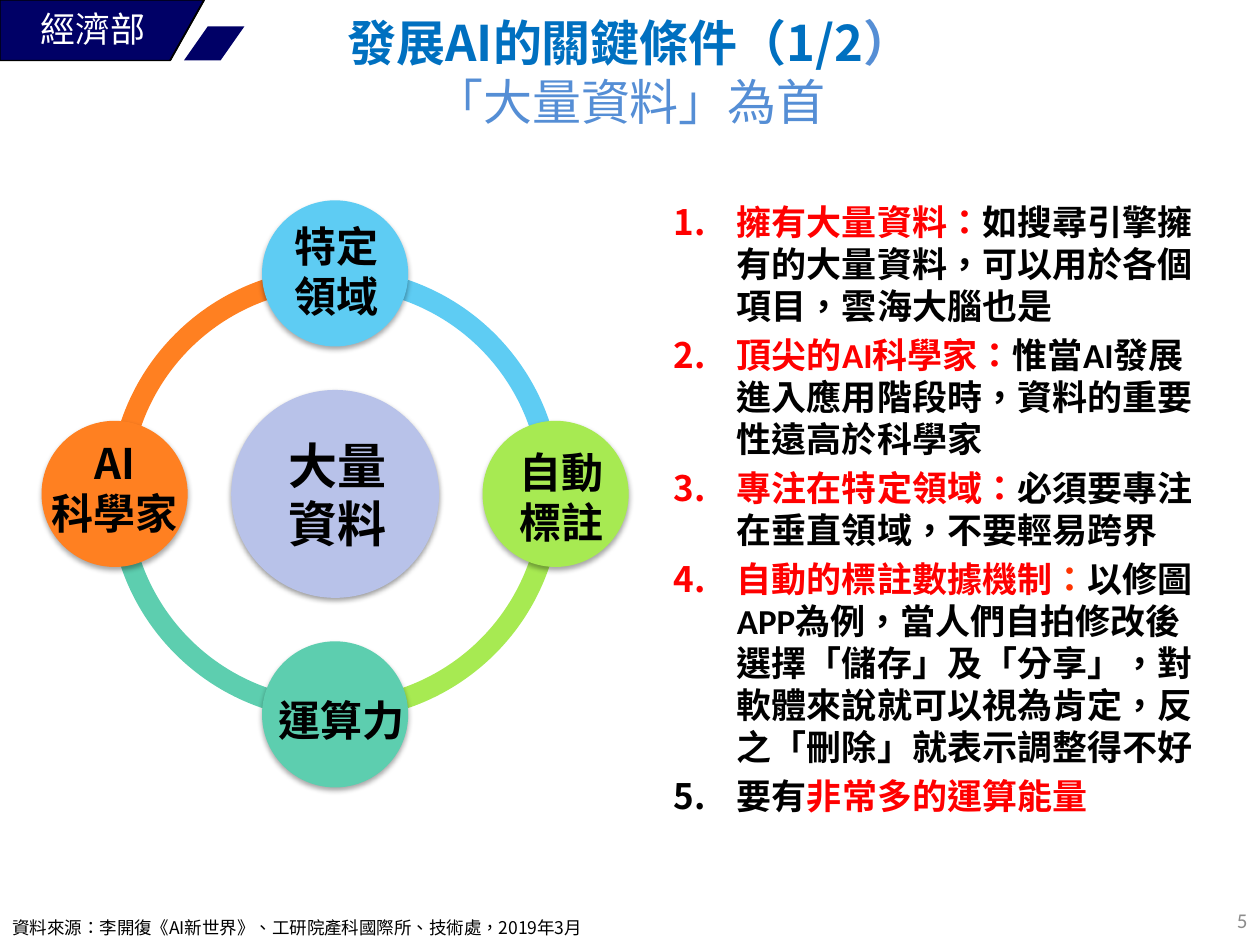
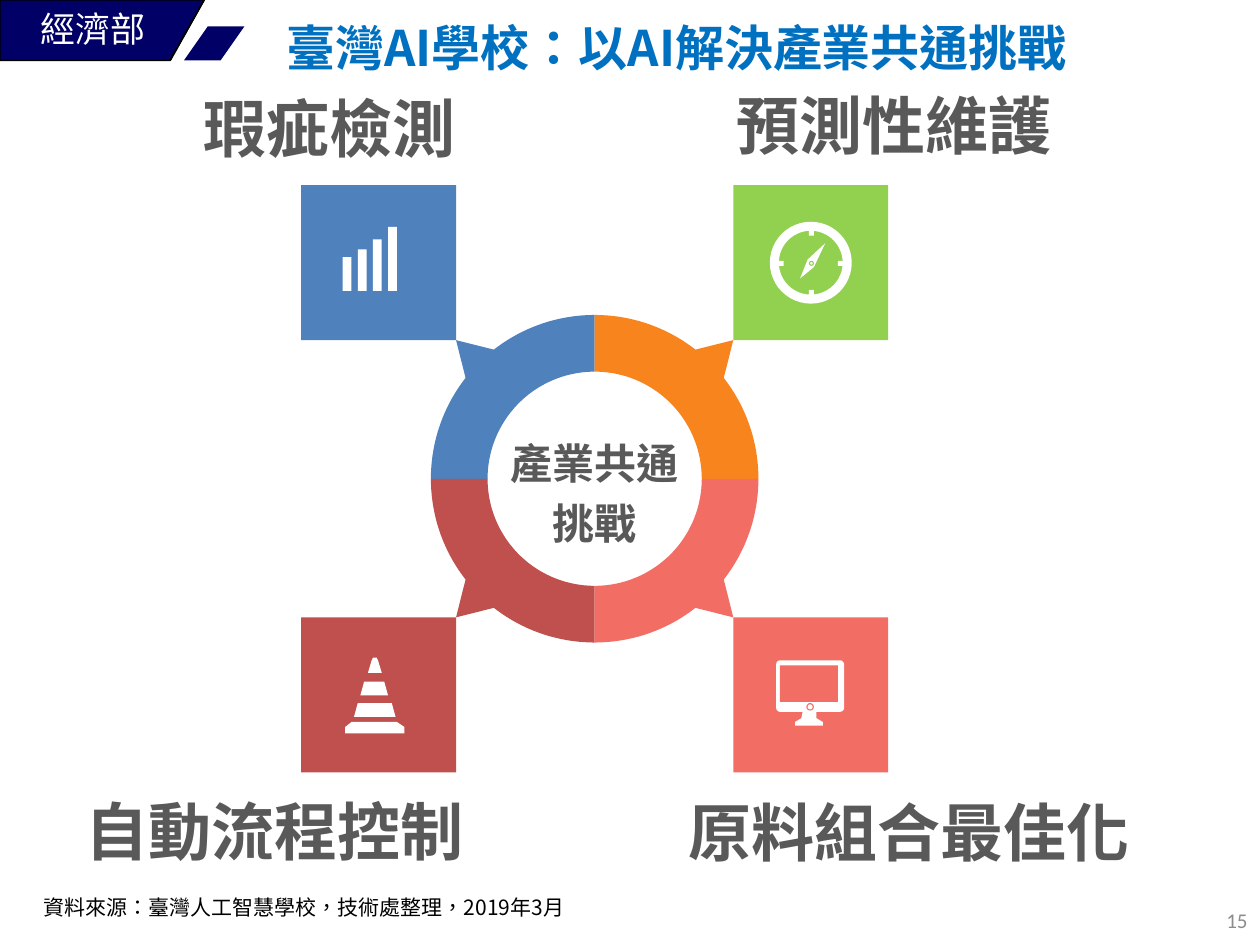
import math

import pptx
import pptx.dml.color
import pptx.enum.shapes
import pptx.enum.text
import pptx.oxml
import pptx.oxml.ns
import pptx.util

PX = 9144  # 100 px to the inch
SHAPE = pptx.enum.shapes.MSO_SHAPE
ALIGN = pptx.enum.text.PP_ALIGN
ANCHOR = pptx.enum.text.MSO_ANCHOR

BLACK, WHITE, RED = "000000", "FFFFFF", "FF0000"
NAVY, TITLE, SOFT, GRAY, PALE = "000066", "0070C0", "558ED5", "595959", "8C8C8C"
SKY, LIME, MINT, ORANGE, LILAC = "5ECCF3", "A7EA52", "5DCEAF", "FF8021", "B8C2E9"
BLUE, GREEN, BRICK, CORAL, AMBER = "4F81BD", "92D050", "C0504D", "F26D64", "F8841D"
NOTO, HEAD, BODY = "Noto Sans CJK SC", "Noto Sans CJK JP", "Calibri"


def emu(*sizes):
    return [round(size * PX) for size in sizes]


def color(code):
    return pptx.dml.color.RGBColor.from_string(code)


def xml(tag, inner="", **attrs):
    """Make one DrawingML element."""
    names = " ".join(f'{key}="{val}"' for key, val in attrs.items())
    space = pptx.oxml.ns.nsdecls("a")
    return pptx.oxml.parse_xml(f"<a:{tag} {space} {names}>{inner}</a:{tag}>")


def paint(shape, fill, line=None):
    shape.shadow.inherit = False
    shape.fill.solid()
    shape.fill.fore_color.rgb = color(fill)
    if line:
        shape.line.color.rgb = color(line)
        shape.line.width = pptx.util.Pt(0.75)
    else:
        shape.line.fill.background()
    return shape


def draw(slide, kind, box, fill, adjust=()):
    shape = slide.shapes.add_shape(kind, *emu(*box))
    for index, value in enumerate(adjust):
        shape.adjustments[index] = value
    return paint(shape, fill)


def outline(slide, x, y, points, fill, line=None):
    """Draw a closed polygon whose points are relative to x, y."""
    places = [emu(x + dx, y + dy) for dx, dy in points]
    form = slide.shapes.build_freeform(*places[0])
    form.add_line_segments(places[1:], close=True)
    return paint(form.convert_to_shape(), fill, line)


def glow(shape, blur, dist, alpha):
    """Give the shape a soft shadow straight below it."""
    effects = shape._element.spPr.find(pptx.oxml.ns.qn("a:effectLst"))
    shade = f'<a:srgbClr val="{BLACK}"><a:alpha val="{alpha * 1000}"/></a:srgbClr>'
    effects.append(xml("outerShdw", shade, blurRad=round(blur * 12700),
                       dist=round(dist * 12700), dir=5400000, rotWithShape=0))


def write(slide, box, paras, size, face=NOTO, bold=False, align=ALIGN.LEFT,
          anchor=ANCHOR.TOP, wrap=True, lead=None):
    """Add a text box; each paragraph is a list of (text, colour[, bold])."""
    frame = slide.shapes.add_textbox(*emu(*box)).text_frame
    frame.word_wrap = wrap
    frame.vertical_anchor = anchor
    for index, runs in enumerate(paras):
        para = frame.add_paragraph() if index else frame.paragraphs[0]
        para.alignment = align
        if lead:
            para.line_spacing = lead
        for text, ink, *weight in runs:
            if text == "\n":
                para.add_line_break()
                continue
            run = para.add_run()
            run.text = text
            run.font.size = pptx.util.Pt(size)
            run.font.name = face
            run.font.bold = weight[0] if weight else bold
            run.font.color.rgb = color(ink)
            props = run._r.get_or_add_rPr()
            props.set("lang", "zh-TW")
            props.append(xml("ea", typeface=face if "CJK" in face else NOTO))
    return frame


def badge(slide):
    outline(slide, 0, 0, [(0, 0), (0, 48), (135, 48), (162, 0)], NAVY, BLACK)
    draw(slide, SHAPE.PARALLELOGRAM, (146, 21, 48, 27), NAVY, [0.7])
    write(slide, (4, 1, 140, 34), [[("經濟部", WHITE)]], 20,
          "Times New Roman", align=ALIGN.CENTER)
    edge = slide.shapes.add_connector(
        pptx.enum.shapes.MSO_CONNECTOR.STRAIGHT, *emu(162, 0, 135, 48))
    edge.line.color.rgb = color(BLACK)
    edge.line.width = pptx.util.Pt(1)
    edge._element.spPr.append(xml("effectLst"))


def page(deck, title, box, number):
    """Start a slide with its badge, title and page number."""
    slide = deck.slides.add_slide(deck.slide_layouts[6])
    badge(slide)
    write(slide, box, [title], 28, HEAD, True, ALIGN.CENTER, ANCHOR.MIDDLE)
    write(slide, (767, 710, 233, 40), [[(number, PALE)]], 12, BODY,
          align=ALIGN.RIGHT, anchor=ANCHOR.MIDDLE)
    return slide


def ring(slide, x, y, size):
    """Draw four nodes on a circle of arcs around a hub."""
    mid, band, hub, node = size // 2, 359, 165, 116
    orbit = mid - node // 2

    def disc(cx, cy, span, fill, alpha, dist):
        box = (cx - span / 2, cy - span / 2, span, span)
        glow(draw(slide, SHAPE.OVAL, box, fill), 3.1, dist, alpha)

    def label(cx, cy, lines, points):
        box = (cx - 66, cy - 50, 132, 100)
        write(slide, box, [[(line, BLACK)] for line in lines], points,
              bold=True, align=ALIGN.CENTER, anchor=ANCHOR.MIDDLE, wrap=False)

    nodes = [  # angle, fill, label, label shift
        (0, LIME, ["自動", "標註"], 5, 2),
        (90, MINT, ["運算力"], 5, 4),
        (180, ORANGE, ["AI", "科學家"], 0, -5),
        (270, SKY, ["特定", "領域"], 1, -2),
    ]
    corner = mid - band / 2
    for angle, fill, *_ in nodes:
        draw(slide, SHAPE.BLOCK_ARC, (x + corner, y + corner, band, band), fill,
             [angle * 0.6, (angle + 90) % 360 * 0.6, 0.046])
    disc(x + mid, y + mid, hub, LILAC, 38, 1.6)
    label(x + mid + 2, y + mid, ["大量資料"], 28)
    for angle, fill, lines, dx, dy in nodes:
        turn = math.radians(angle)
        cx = x + mid + orbit * math.cos(turn)
        cy = y + mid + orbit * math.sin(turn)
        disc(cx, cy, node, fill, 35, 1.8)
        label(cx + dx, cy + dy, lines, 24)


def points(slide, box):
    """Write the numbered list of conditions."""
    items = [
        [("擁有大量資料：", RED),
         ("如搜尋引擎擁有的大量資料，可以用於各個項目，雲海大腦也是", BLACK)],
        [("頂尖的AI科學家：", RED),
         ("惟當AI發展進入應用階段時，資料的重要性遠高於科學家", BLACK)],
        [("專注在特定領域：", RED),
         ("必須要專注在垂直領域，不要輕易跨界", BLACK)],
        [("自動的標註數據機制", RED), ("：", "FF3300"),
         ("以修圖APP為例，當人們自拍修改後選擇「儲存」及「分享」，"
          "對軟體來說就可以視為肯定，反之「刪除」就表示調整得不好", BLACK)],
        [("要有", BLACK), ("非常多的運算能量", RED)],
    ]
    for para in write(slide, box, items, 20, BODY, True).paragraphs:
        para.space_before = pptx.util.Pt(4)
        props = para._p.get_or_add_pPr()
        props.set("marL", str(50 * PX))
        props.set("indent", str(-50 * PX))
        props.append(xml("buFont", typeface="+mj-lt"))
        props.append(xml("buAutoNum", type="arabicPeriod"))


def bars(slide, x, y, back):
    for index, tall in enumerate((27, 33, 41, 51)):
        draw(slide, SHAPE.RECTANGLE,
             (x + 33 + 12 * index, y + 84 - tall, 7, tall), WHITE)


def compass(slide, x, y, back):
    draw(slide, SHAPE.DONUT, (x + 29, y + 29, 65, 65), WHITE, [0.11])
    for dx, dy, wide, tall in ((60, 35, 4, 5), (60, 83, 4, 5),
                               (35, 60, 5, 4), (83, 60, 5, 4)):
        draw(slide, SHAPE.RECTANGLE, (x + dx, y + dy, wide, tall), WHITE)
    outline(slide, x, y, [(53, 74), (64, 65), (73, 46), (59, 59)], WHITE)
    draw(slide, SHAPE.OVAL, (x + 60, y + 60, 4, 4), back)
    draw(slide, SHAPE.OVAL, (x + 61, y + 61, 2, 2), WHITE)


def cone(slide, x, y, back):
    for part in (
        [(82, 92), (35, 92), (35, 87), (40, 83), (76, 83), (82, 87)],
        [(42, 79), (45, 68), (72, 68), (75, 79)],
        [(47, 62), (50, 51), (66, 51), (69, 62)],
        [(53, 44), (56, 34), (57, 32), (60, 32), (61, 34), (64, 44)],
    ):
        outline(slide, x, y, part, WHITE)


def screen(slide, x, y, back):
    draw(slide, SHAPE.ROUNDED_RECTANGLE, (x + 34, y + 34, 54, 41), WHITE, [0.08])
    draw(slide, SHAPE.RECTANGLE, (x + 37, y + 38, 46, 29), back)
    outline(slide, x, y, [(55, 75), (54, 80), (49, 83), (49, 86),
                          (71, 86), (71, 83), (66, 80), (66, 75)], WHITE)
    draw(slide, SHAPE.OVAL, (x + 58, y + 68, 6, 6), back)
    draw(slide, SHAPE.OVAL, (x + 59, y + 69, 4, 4), WHITE)


def petal(slide, cx, cy, sx, sy, fill):
    """Draw a quarter ring with a pointed tip, mirrored by sx and sy."""
    outer, inner, tip = 130, 85, 110

    def arc(radius, start, stop):
        step = 2 if stop > start else -2
        return [(radius * math.cos(math.radians(deg)),
                 radius * math.sin(math.radians(deg)))
                for deg in range(start, stop + step, step)]

    shape = (arc(outer, 0, 38) + [(tip, tip)] + arc(outer, 52, 90)
             + arc(inner, 90, 0))
    outline(slide, cx, cy, [(sx * dx, sy * dy) for dx, dy in shape], fill)


def wheel(slide, x, y, size):
    """Draw the ring of petals, with an icon tile and label at each corner."""
    mid, tile = size // 2, 123
    far = size - tile
    parts = [  # signs, petal, tile, icon, label, label box
        (-1, -1, BLUE, BLUE, bars, "瑕疵檢測", (-113, -93, 245, 85)),
        (1, -1, AMBER, GREEN, compass, "預測性維護", (336, -95, 358, 85)),
        (-1, 1, BRICK, BRICK, cone, "自動流程控制", (-223, 465, 362, 78)),
        (1, 1, CORAL, CORAL, screen, "原料組合最佳化", (298, 466, 396, 83)),
    ]
    for sx, sy, leaf, back, icon, text, (dx, dy, wide, tall) in parts:
        petal(slide, x + mid, y + mid, sx, sy, leaf)
        left = x + (far if sx > 0 else 0)
        top = y + (far if sy > 0 else 0)
        draw(slide, SHAPE.RECTANGLE, (left, top, tile, tile), back)
        icon(slide, left, top, back)
        write(slide, (x + dx, y + dy, wide, tall), [[(text, GRAY)]], 36, BODY,
              True, ALIGN.LEFT if sx > 0 else ALIGN.RIGHT, lead=1.2)
    write(slide, (x + 132, y + 187, 201, 107),
          [[("產業共通", GRAY), ("\n", GRAY), ("挑戰", GRAY)]], 24, BODY, True,
          ALIGN.CENTER, lead=1.2)


def main():
    deck = pptx.Presentation()
    deck.slide_width, deck.slide_height = emu(1000, 750)

    title = [("發展AI的關鍵條件（1/2", TITLE), ("）", SOFT), ("\n", SOFT),
             ("「大量資料」為首", SOFT, False)]
    slide = page(deck, title, (0, 0, 1000, 114), "5")
    ring(slide, 33, 159, 466)
    points(slide, (525, 154, 450, 495))
    write(slide, (0, 723, 571, 27), [[
        ("資料來源：李開復《AI新世界》、工研院產科國際所、技術處，2019年3月", BLACK)]], 10)

    title = [("臺灣AI學校：以AI解決產業共通挑戰", TITLE)]
    slide = page(deck, title, (87, 0, 900, 75), "15")
    wheel(slide, 239, 147, 466)
    write(slide, (25, 705, 500, 30), [[
        ("資料來源：臺灣人工智慧學校，技術處整理，2019年3月", BLACK)]], 12)

    deck.save("out.pptx")


if __name__ == "__main__":
    main()
